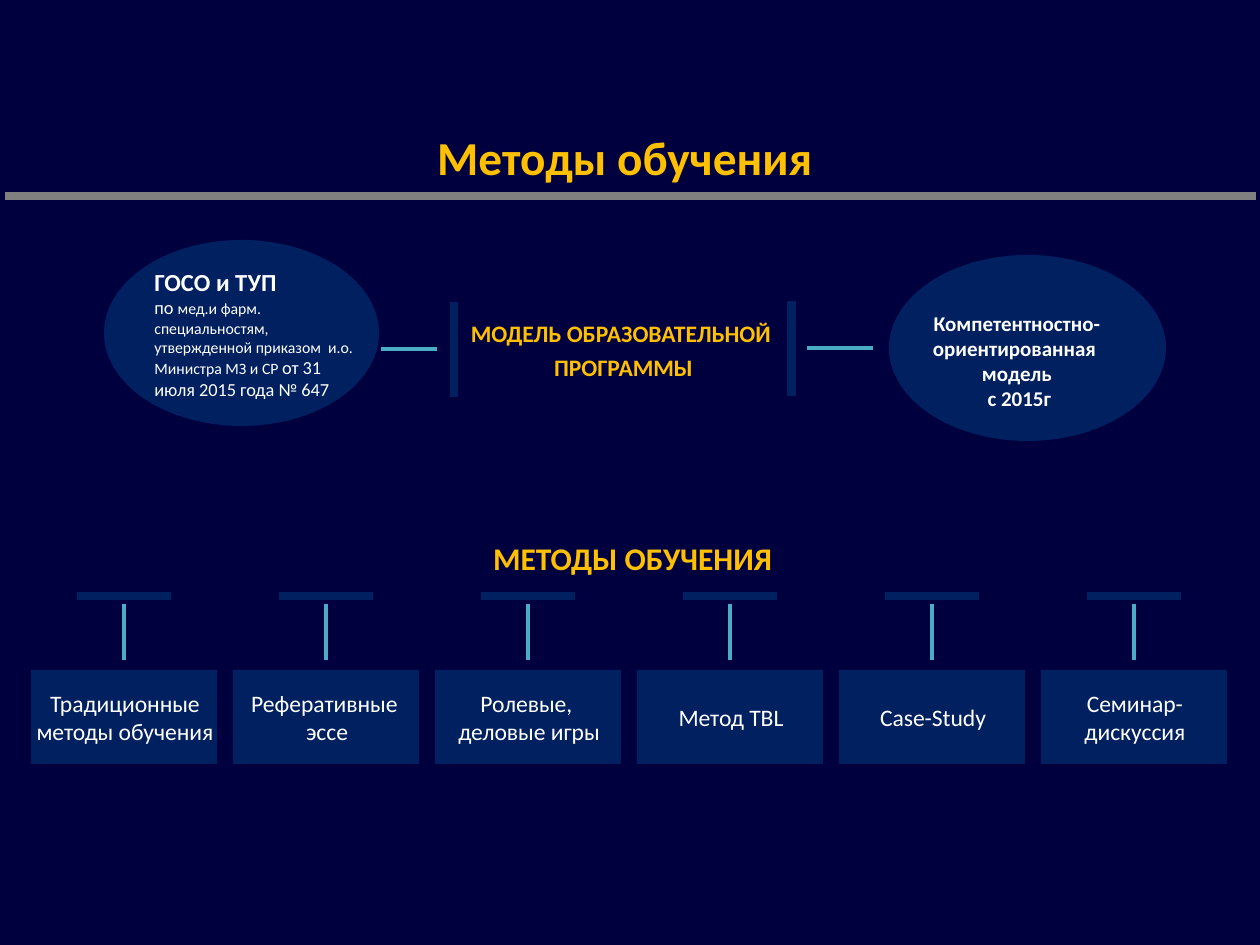
from lxml import etree
from pptx import Presentation, util as u
from pptx.dml.color import RGBColor
from pptx.enum import shapes, text
from pptx.oxml.ns import qn

PX = 914400 / 126
NAVY, GOLD, WHITE, TEAL, GREY = "002060", "FFC000", "FFFFFF", "4BACC6", "808080"
CENTER, LEFT = text.PP_ALIGN.CENTER, text.PP_ALIGN.LEFT


def px(*lengths):
    """Turn pixel lengths into EMU."""
    return [u.Emu(round(length * PX)) for length in lengths]


def write(frame, paragraphs, color, **paragraph_format):
    """Fill a frame; each paragraph is a list of (words, size, bold) spans."""
    for index, spans in enumerate(paragraphs):
        para = frame.paragraphs[0] if index == 0 else frame.add_paragraph()
        for name, value in paragraph_format.items():
            setattr(para, name, value)
        for words, size, bold in spans:
            span = para.add_run()
            span.text = words
            font = {"name": "Calibri", "size": u.Pt(size), "bold": bold}
            for name, value in font.items():
                setattr(span.font, name, value)
            span.font.color.rgb = RGBColor.from_string(color)


deck = Presentation()
deck.slide_width, deck.slide_height = px(1260, 945)
page = deck.slides.add_slide(deck.slide_layouts[5])
page.background.fill.solid()
page.background.fill.fore_color.rgb = RGBColor.from_string("00003E")

# Title
title = page.shapes.title
title.left, title.top, title.width, title.height = px(0, 118, 1260, 78)
title.text_frame.vertical_anchor = text.MSO_ANCHOR.MIDDLE
write(title.text_frame, [[("Методы обучения ", 27, True)]], GOLD, alignment=CENTER)

# Navy shapes: ovals, side bars of the model, then a bar and a box per method
RECTANGLE, OVAL = shapes.MSO_SHAPE.RECTANGLE, shapes.MSO_SHAPE.OVAL
centers = [124 + 202 * column for column in range(6)]
blocks = [
    (OVAL, 104, 240, 275, 186),
    (OVAL, 889, 255, 277, 186),
    (RECTANGLE, 450, 302, 8, 95),
    (RECTANGLE, 787, 301, 9, 95),
]
lines = [
    (5, 196, 1256, 196, GREY, 4.5),
    (437, 349, 381, 349, TEAL, 2.25),
    (873, 348, 807, 348, TEAL, 2.25),
]
for center in centers:
    blocks.append((RECTANGLE, center - 47, 592, 94, 8))
    blocks.append((RECTANGLE, center - 93, 670, 186, 94))
    lines.append((center, 604, center, 660, TEAL, 2.25))

for kind, *place in blocks:
    block = page.shapes.add_shape(kind, *px(*place))
    block.shadow.inherit = False
    block.fill.solid()
    block.fill.fore_color.rgb = RGBColor.from_string(NAVY)
    block.line.fill.background()

for *ends, color, weight in lines:
    line = page.shapes.add_connector(shapes.MSO_CONNECTOR.STRAIGHT, *px(*ends))
    line.line.color.rgb = RGBColor.from_string(color)
    line.line.width = u.Pt(weight)
    etree.SubElement(line._element.spPr, qn("a:effectLst"))

# Texts: place, wrapping, paragraphs, colour, paragraph format
centered = {"alignment": CENTER}
spaced = {"alignment": CENTER, "line_spacing": 0.9, "space_after": u.Pt(4.7)}
standard = [
    [("ГОСО и ТУП", 14, True)],
    [
        ("по ", 10.5, False),
        ("мед.и фарм. специальностям, утвержденной приказом  и.о. Министра МЗ и СР ", 9, False),
        ("от 31 июля 2015 года № 647", 10.5, False),
    ],
]
competence = ["Компетентностно-", "ориентированная ", "модель", " с 2015г"]
model = ["МОДЕЛЬ ОБРАЗОВАТЕЛЬНОЙ ", "ПРОГРАММЫ"]
texts = [
    ((142, 261, 226, 176), True, standard, WHITE, {"alignment": LEFT}),
    ((915, 304, 204, 115), True, [[(words, 12, True)] for words in competence], WHITE, centered),
    ((456, 316, 335, 74), False, [[(words, 13.5, True)] for words in model], GOLD, spaced),
    ((479, 537, 307, 47), False, [[("МЕТОДЫ ОБУЧЕНИЯ", 18, True)]], GOLD, spaced),
]
methods = [
    (215, ["Традиционные", " методы обучения "]),
    (180, ["Реферативные ", "эссе"]),
    (169, ["Ролевые, ", "деловые игры"]),
    (132, ["Метод TBL"]),
    (134, ["Case-Study"]),
    (127, ["Семинар-", "дискуссия"]),
]
for center, (width, rows) in zip(centers, methods):
    height = 13 + 29 * len(rows)
    place = (center + 1 - width / 2, 718 - height / 2, width, height)
    texts.append((place, False, [[(words, 13.5, False)] for words in rows], WHITE, centered))

for place, wrap, paragraphs, color, paragraph_format in texts:
    box = page.shapes.add_textbox(*px(*place))
    box.text_frame.word_wrap = wrap
    write(box.text_frame, paragraphs, color, **paragraph_format)

deck.save("out.pptx")
